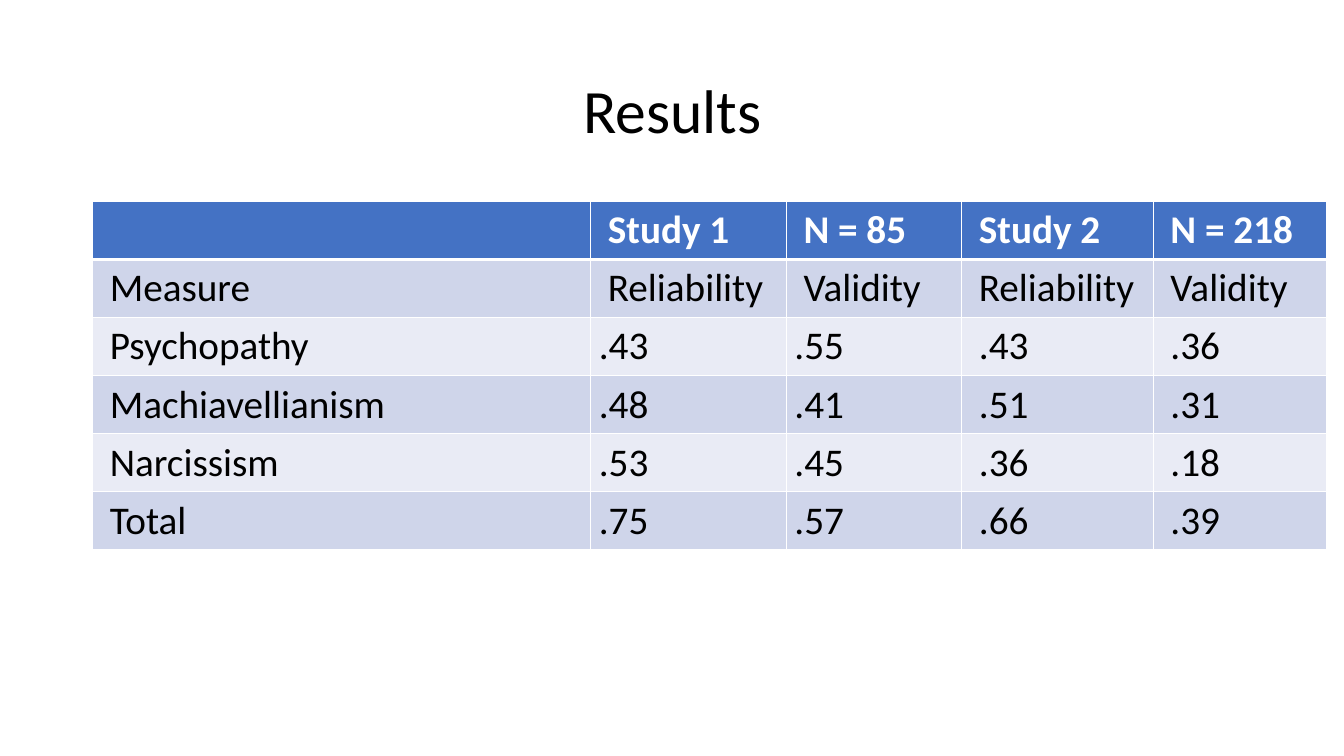
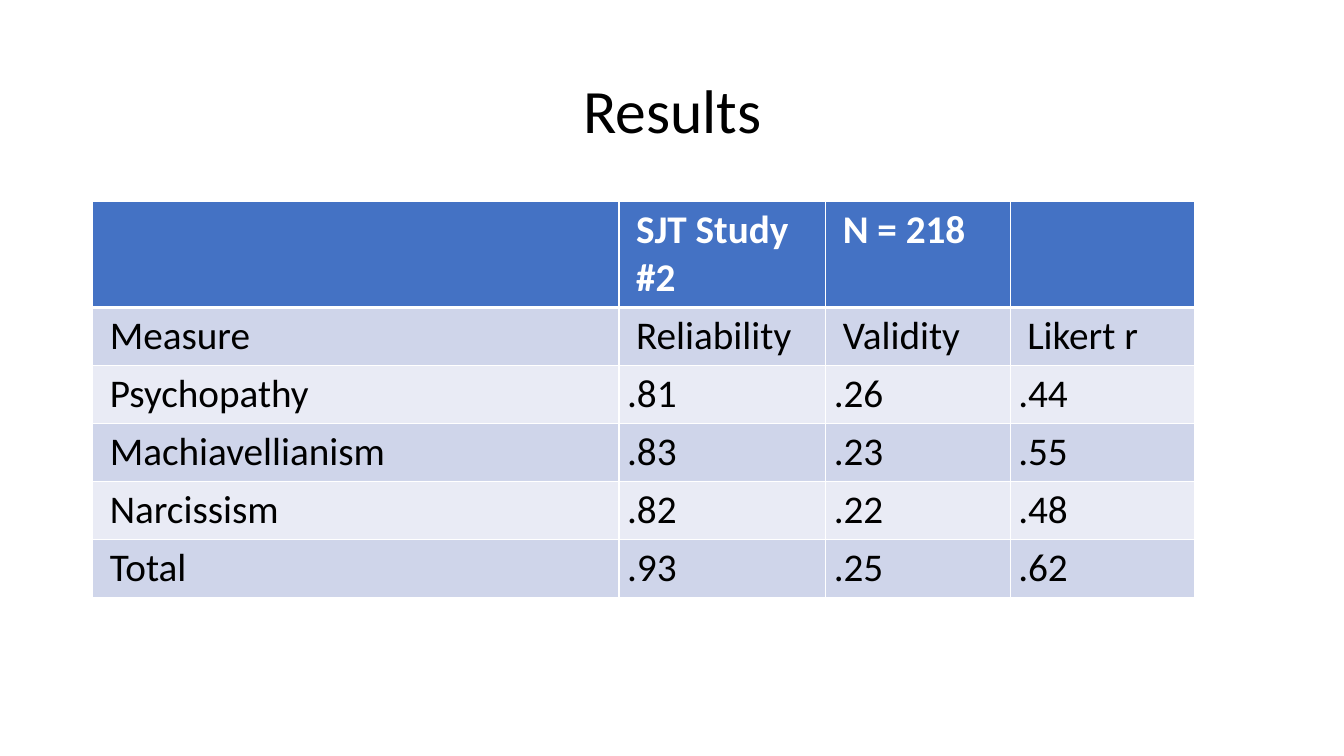
import pptx
import pptx.dml.color
import pptx.enum.text
import pptx.oxml
import pptx.oxml.ns
import pptx.util

Inches = pptx.util.Inches
Pt = pptx.util.Pt

# Shared look
FONT = "Calibri"
WHITE, BLACK = "FFFFFF", "000000"
HEADER_FILL = "4472C4"
BAND_FILLS = ("E9EBF5", "CFD5EA")
TITLE_BOX = (0.92, 0.4, 11.5, 1.45)
TABLE_ORIGIN = (0.92, 2)
ROW_HEIGHT = 0.57
WIDE_INSET, NARROW_INSET = 0.17, 0.08
TITLE_FORMAT = {"name": FONT, "size": Pt(44), "bold": False}
HEADER_FORMAT = {"name": FONT, "size": Pt(28), "bold": True}
BODY_FORMAT = {**HEADER_FORMAT, "bold": False}

# Content: narrow_columns hold figures set closer to the cell's edge
STUDIES = [
    {
        "title": "Results",
        "column_widths": (4.94, 1.94, 1.74, 1.9, 1.72),
        "header_height": ROW_HEIGHT,
        "narrow_columns": (1, 2),
        "rows": [
            ("", "Study 1", "N = 85", "Study 2", "N = 218"),
            ("Measure", "Reliability", "Validity", "Reliability", "Validity"),
            ("Psychopathy", ".43", ".55", ".43", ".36"),
            ("Machiavellianism", ".48", ".41", ".51", ".31"),
            ("Narcissism", ".53", ".45", ".36", ".18"),
            ("Total", ".75", ".57", ".66", ".39"),
        ],
    },
    {
        "title": "Results",
        "column_widths": (5.22, 2.05, 1.83, 1.83),
        "header_height": 1.04,
        "narrow_columns": (1, 2, 3),
        "rows": [
            ("", "SJT Study #2", "N = 218", ""),
            ("Measure", "Reliability", "Validity", "Likert r"),
            ("Psychopathy", ".81", ".26", ".44"),
            ("Machiavellianism", ".83", ".23", ".55"),
            ("Narcissism", ".82", ".22", ".48"),
            ("Total", ".93", ".25", ".62"),
        ],
    },
]


def rgb(hex_color):
    return pptx.dml.color.RGBColor.from_string(hex_color)


def set_attributes(target, values):
    for name, value in values.items():
        setattr(target, name, value)


def add_text(paragraph, text, font_format, color):
    run = paragraph.add_run()
    run.text = text
    set_attributes(run.font, font_format)
    run.font.color.rgb = rgb(color)


def add_borders(cell, widths):
    """Draw white cell borders; widths maps each side to points."""
    properties = cell._tc.get_or_add_tcPr()
    for side, points in widths.items():
        properties.append(pptx.oxml.parse_xml(
            f'<a:ln{side} {pptx.oxml.ns.nsdecls("a")} w="{Pt(points)}">'
            f'<a:solidFill><a:srgbClr val="{WHITE}"/></a:solidFill>'
            f'</a:ln{side}>'))


def place_title(slide, text, box):
    title = slide.shapes.title
    left, top, width, height = map(Inches, box)
    set_attributes(title, {"left": left, "top": top,
                           "width": width, "height": height})
    frame = title.text_frame
    set_attributes(frame, {
        "word_wrap": True,
        "auto_size": pptx.enum.text.MSO_AUTO_SIZE.NONE,
        "vertical_anchor": pptx.enum.text.MSO_ANCHOR.MIDDLE,
    })
    heading = frame.paragraphs[0]
    set_attributes(heading, {"alignment": pptx.enum.text.PP_ALIGN.CENTER,
                             "line_spacing": 0.9})
    add_text(heading, text, TITLE_FORMAT, BLACK)


def format_cell(cell, text, row, inset):
    is_header = row == 0
    # A thick rule divides the header from the measures
    add_borders(cell, {"L": 1, "R": 1, "T": 3 if row == 1 else 1,
                       "B": 3 if is_header else 1})
    cell.fill.solid()
    cell.fill.fore_color.rgb = rgb(HEADER_FILL if is_header
                                   else BAND_FILLS[row % 2])
    set_attributes(cell, {
        "margin_left": Inches(inset), "margin_right": Inches(inset),
        "margin_top": Inches(0.05), "margin_bottom": Inches(0.05),
    })
    if text:
        add_text(cell.text_frame.paragraphs[0], text,
                 HEADER_FORMAT if is_header else BODY_FORMAT,
                 WHITE if is_header else BLACK)


def place_results_table(slide, study, origin):
    rows, widths = study["rows"], study["column_widths"]
    heights = [study["header_height"]] + [ROW_HEIGHT] * (len(rows) - 1)
    table = slide.shapes.add_table(
        len(rows), len(widths), *map(Inches, origin),
        Inches(sum(widths)), Inches(sum(heights))).table
    for column, width in zip(table.columns, widths):
        column.width = Inches(width)
    for table_row, height in zip(table.rows, heights):
        table_row.height = Inches(height)
    for r, texts in enumerate(rows):
        for c, text in enumerate(texts):
            is_narrow = r > 1 and c in study["narrow_columns"]
            format_cell(table.cell(r, c), text, r,
                        NARROW_INSET if is_narrow else WIDE_INSET)


def add_results_slide(deck, study):
    slide = deck.slides.add_slide(deck.slide_layouts.get_by_name("Title Only"))
    place_title(slide, study["title"], TITLE_BOX)
    place_results_table(slide, study, TABLE_ORIGIN)


def main():
    deck = pptx.Presentation()
    set_attributes(deck, {"slide_width": Inches(13.33),
                          "slide_height": Inches(7.5)})
    for study in STUDIES:
        add_results_slide(deck, study)
    deck.save("out.pptx")


if __name__ == "__main__":
    main()
